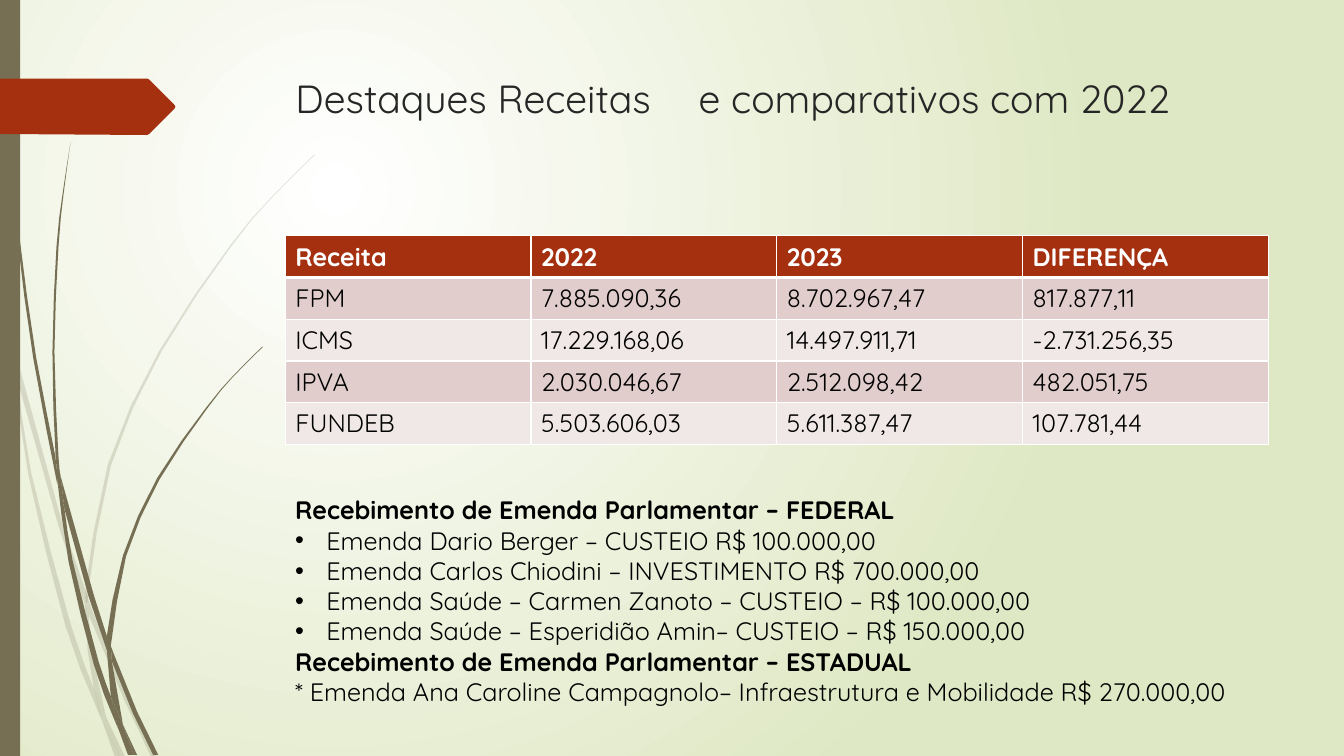
from dataclasses import dataclass

from lxml import etree
from pptx import Presentation
from pptx.dml.color import RGBColor
from pptx.enum.shapes import MSO_SHAPE
from pptx.enum.text import MSO_ANCHOR, MSO_AUTO_SIZE, PP_ALIGN
from pptx.oxml.ns import qn
from pptx.util import Inches, Pt

RECTANGLE = MSO_SHAPE.RECTANGLE
TOP = MSO_ANCHOR.TOP
NO_AUTOFIT = MSO_AUTO_SIZE.NONE
LEFT = PP_ALIGN.LEFT
TITLE_ONLY = 5


@dataclass(frozen=True)
class Theme:
    font: str = "Quicksand"
    title_size: int = 28
    body_size: int = 18
    title: str = "262626"
    text: str = "000000"
    white: str = "FFFFFF"
    accent: str = "A53010"
    stem: str = "766F54"
    band_dark: str = "E1CDCC"
    band_light: str = "F0E8E7"
    background_edge: str = "DFE8C4"


THEME = Theme()

# Each piece of grass: its left edge and its right edge, both from the top down.
PALE_GRASS = [
    ([(0, 2.82), (0, 2.99), (0.1, 3.44), (0.11, 3.5)], [(0, 2.82), (0.09, 3.22), (0.11, 3.5)]),
    ([(0.14, 3.45), (0.17, 3.76), (0.58, 5.22), (0.84, 5.99)],
     [(0.14, 3.45), (0.62, 5.2), (0.85, 5.86), (0.84, 5.99)]),
    ([(0.88, 5.96), (0.88, 6.1), (1.23, 6.94), (1.5, 7.51)],
     [(0.88, 5.96), (0.92, 6.07), (1.27, 6.92), (1.55, 7.51)]),
    ([(1.05, 7.11), (1.19, 7.51)], [(1.05, 7.11), (1.24, 7.51)]),
    ([(0.11, 3.5), (0.28, 4.7), (0.65, 6.21), (0.92, 6.93), (1.01, 7.14)],
     [(0.11, 3.5), (0.17, 3.76), (0.31, 4.69), (0.7, 6.19), (0.93, 6.83), (1.01, 7.14)]),
    ([(0.84, 5.99), (0.87, 6.46), (0.93, 6.83), (1.05, 7.11)],
     [(0.84, 5.99), (0.88, 6.1), (0.91, 6.46), (1.05, 7.11)]),
    ([(3.12, 1.53), (2.68, 1.97), (2.28, 2.44), (1.58, 3.48), (1.07, 4.61), (0.85, 5.84), (0.88, 5.96)],
     [(3.12, 1.54), (2.68, 1.98), (2.29, 2.45), (1.6, 3.49), (1.1, 4.62), (0.88, 5.84), (0.88, 5.96)]),
    ([(1.01, 7.14), (1.14, 7.51)], [(1.01, 7.14), (1.19, 7.51)]),
    ([(0.85, 5.86), (0.84, 5.99), (0.88, 6.1)], [(0.85, 5.86), (0.88, 5.96), (0.88, 6.1)]),
    ([(0.93, 6.83), (1.01, 7.14), (1.19, 7.51)], [(0.93, 6.83), (1.05, 7.11), (1.19, 7.51)]),
]
DARK_GRASS = [
    ([(0.03, 0), (0.07, 1.1), (0.17, 2.33), (0.33, 3.55), (0.57, 4.81)],
     [(0.04, 0), (0.08, 1.09), (0.19, 2.32), (0.36, 3.55), (0.55, 4.53), (0.57, 4.81)]),
    ([(0.6, 4.72), (0.64, 5.05), (0.88, 5.92), (1.06, 6.45)],
     [(0.6, 4.72), (0.93, 5.9), (1.06, 6.31), (1.06, 6.45)]),
    ([(1.1, 6.41), (1.11, 6.56), (1.32, 7.08), (1.52, 7.49)],
     [(1.1, 6.41), (1.13, 6.49), (1.36, 7.06), (1.57, 7.49)]),
    ([(0.57, 4.77), (0.68, 5.57), (0.93, 6.59), (1.11, 7.08), (1.17, 7.22)],
     [(0.57, 4.77), (0.64, 5.05), (0.72, 5.56), (0.98, 6.57), (1.1, 6.91), (1.17, 7.22)]),
    ([(0.7, 1.41), (0.62, 1.93), (0.56, 2.45), (0.52, 3.49), (0.55, 4.49), (0.6, 4.72)],
     [(0.7, 1.41), (0.63, 1.93), (0.58, 2.45), (0.54, 3.49), (0.58, 4.53), (0.6, 4.72)]),
    ([(1.22, 7.19), (1.33, 7.49)], [(1.22, 7.19), (1.36, 7.49)]),
    ([(0.55, 4.49), (0.57, 4.77), (0.64, 5.05)], [(0.55, 4.49), (0.6, 4.72), (0.64, 5.05)]),
    ([(2.6, 3.44), (2.31, 3.73), (2.04, 4.05), (1.56, 4.74), (1.22, 5.51), (1.06, 6.31), (1.1, 6.41)],
     [(2.61, 3.44), (2.31, 3.74), (2.05, 4.06), (1.58, 4.76), (1.25, 5.52), (1.11, 6.33), (1.1, 6.41)]),
    ([(1.17, 7.22), (1.27, 7.49)], [(1.17, 7.22), (1.31, 7.49)]),
    ([(1.06, 6.45), (1.1, 6.91), (1.22, 7.19)], [(1.06, 6.45), (1.11, 6.56), (1.22, 7.19)]),
    ([(1.06, 6.31), (1.06, 6.45), (1.11, 6.56)], [(1.06, 6.31), (1.1, 6.41), (1.11, 6.56)]),
    ([(1.1, 6.91), (1.17, 7.22), (1.3, 7.49)], [(1.1, 6.91), (1.22, 7.19), (1.33, 7.49)]),
]
ARROW_TAG = [(0, 0.78), (1.46, 0.78), (1.48, 0.79), (1.73, 1.04), (1.74, 1.06),
             (1.73, 1.08), (1.48, 1.33), (1.46, 1.34), (0, 1.33)]

REVENUES = [
    ("Receita", "2022", "2023", "DIFERENÇA"),
    ("FPM", "7.885.090,36", "8.702.967,47", "817.877,11"),
    ("ICMS", "17.229.168,06", "14.497.911,71", "-2.731.256,35"),
    ("IPVA", "2.030.046,67", "2.512.098,42", "482.051,75"),
    ("FUNDEB", "5.503.606,03", "5.611.387,47", "107.781,44"),
]
HEADING, BULLET, PLAIN = "heading", "bullet", "plain"
AMENDMENTS = [
    (HEADING, "Recebimento de Emenda Parlamentar – FEDERAL"),
    (BULLET, "Emenda Dario Berger – CUSTEIO R$ 100.000,00"),
    (BULLET, "Emenda Carlos Chiodini – INVESTIMENTO R$ 700.000,00"),
    (BULLET, "Emenda Saúde – Carmen Zanoto – CUSTEIO – R$ 100.000,00"),
    (BULLET, "Emenda Saúde – Esperidião Amin– CUSTEIO – R$ 150.000,00"),
    (HEADING, "Recebimento de Emenda Parlamentar – ESTADUAL"),
    (PLAIN, "* Emenda Ana Caroline Campagnolo– Infraestrutura e Mobilidade R$ 270.000,00"),
]


def color(code):
    return RGBColor.from_string(code)


def style(paragraph, size, code, bold=False):
    paragraph.alignment = LEFT
    paragraph.font.name = THEME.font
    paragraph.font.size = Pt(size)
    paragraph.font.bold = bold
    paragraph.font.color.rgb = color(code)


def paint_background(slide):
    """Radial gradient centred on the upper left quarter."""
    fill = slide.background.fill
    fill.gradient()
    for stop, code in zip(fill.gradient_stops, (THEME.white, THEME.background_edge)):
        stop.color.rgb = color(code)
    linear = next(slide.element.iter(qn("a:lin")))
    radial = etree.Element(qn("a:path"), path="circle")
    etree.SubElement(radial, qn("a:fillToRect"), l="50000", t="50000", r="100000", b="100000")
    linear.getparent().replace(linear, radial)


def paint_shape(shape, code, opacity=100):
    shape.shadow.inherit = False
    shape.fill.solid()
    shape.fill.fore_color.rgb = color(code)
    shape.line.fill.background()
    if opacity < 100:
        solid = shape.element.spPr.find(qn("a:solidFill"))
        etree.SubElement(solid[0], qn("a:alpha"), val=str(opacity * 1000))


def smooth(points):
    """Add the middle of each Catmull-Rom span between the points."""
    curve = [points[0]]
    padded = [points[0], *points, points[-1]]
    for a, b, c, d in zip(padded, padded[1:], padded[2:], padded[3:]):
        if len(points) > 4:
            curve.append(tuple((9 * (q + r) - p - s) / 16 for p, q, r, s in zip(a, b, c, d)))
        curve.append(c)
    return curve


def add_outline(slide, points, code, opacity=100):
    corners = [(Inches(x), Inches(y)) for x, y in points]
    builder = slide.shapes.build_freeform(*corners[0])
    builder.add_line_segments(corners[1:], close=True)
    paint_shape(builder.convert_to_shape(), code, opacity)


def add_decoration(slide, height):
    for grass, opacity in ((PALE_GRASS, 20), (DARK_GRASS, 100)):
        for left_edge, right_edge in grass:
            outline = smooth(left_edge) + smooth(right_edge)[::-1]
            add_outline(slide, outline, THEME.stem, opacity)
    bar = slide.shapes.add_shape(RECTANGLE, 0, 0, Inches(0.2), height)
    paint_shape(bar, THEME.stem)
    add_outline(slide, ARROW_TAG, THEME.accent)


def set_title(slide, text):
    title = slide.shapes.title
    title.left, title.top = Inches(2.83), Inches(0.69)
    title.width, title.height = Inches(9.75), Inches(1.4)
    frame = title.text_frame
    frame.text = text
    frame.auto_size = NO_AUTOFIT
    frame.vertical_anchor = TOP
    style(frame.paragraphs[0], THEME.title_size, THEME.title)


def set_borders(cell, top_width, bottom_width):
    properties = cell._tc.get_or_add_tcPr()
    widths = {"a:lnL": 1, "a:lnR": 1, "a:lnT": top_width, "a:lnB": bottom_width}
    for position, (tag, width) in enumerate(widths.items()):
        line = etree.Element(qn(tag), w=str(Pt(width)))
        solid = etree.SubElement(line, qn("a:solidFill"))
        etree.SubElement(solid, qn("a:srgbClr"), val=THEME.white)
        properties.insert(position, line)


def add_revenue_table(slide):
    frame = slide.shapes.add_table(len(REVENUES), len(REVENUES[0]), Inches(2.83),
                                   Inches(2.34), Inches(9.75), Inches(2.05))
    for row_index, values in enumerate(REVENUES):
        header = row_index == 0
        band = THEME.band_dark if row_index % 2 else THEME.band_light
        for column_index, value in enumerate(values):
            cell = frame.table.cell(row_index, column_index)
            cell.text = value
            cell.fill.solid()
            cell.fill.fore_color.rgb = color(THEME.accent if header else band)
            style(cell.text_frame.paragraphs[0], THEME.body_size,
                  THEME.white if header else THEME.text, header)
            set_borders(cell, 3 if row_index == 1 else 1, 3 if header else 1)


def add_bullet(paragraph):
    properties = paragraph._p.get_or_add_pPr()
    indent = Inches(0.31)
    properties.set("marL", str(indent))
    properties.set("indent", str(-indent))
    etree.SubElement(properties, qn("a:buFont")).set("typeface", "Arial")
    etree.SubElement(properties, qn("a:buChar")).set("char", "•")


def add_amendments(slide):
    box = slide.shapes.add_textbox(Inches(2.83), Inches(4.86), Inches(10.04), Inches(2.2))
    frame = box.text_frame
    frame.word_wrap = True
    for index, (kind, text) in enumerate(AMENDMENTS):
        paragraph = frame.add_paragraph() if index else frame.paragraphs[0]
        paragraph.text = text
        if kind == BULLET:
            add_bullet(paragraph)
        style(paragraph, THEME.body_size, THEME.text, kind == HEADING)


def main():
    deck = Presentation()
    deck.slide_width, deck.slide_height = Inches(13.33), Inches(7.5)
    slide = deck.slides.add_slide(deck.slide_layouts[TITLE_ONLY])
    paint_background(slide)
    add_decoration(slide, deck.slide_height)
    set_title(slide, "Destaques Receitas\te comparativos com 2022")
    add_revenue_table(slide)
    add_amendments(slide)
    deck.save("out.pptx")


if __name__ == "__main__":
    main()
